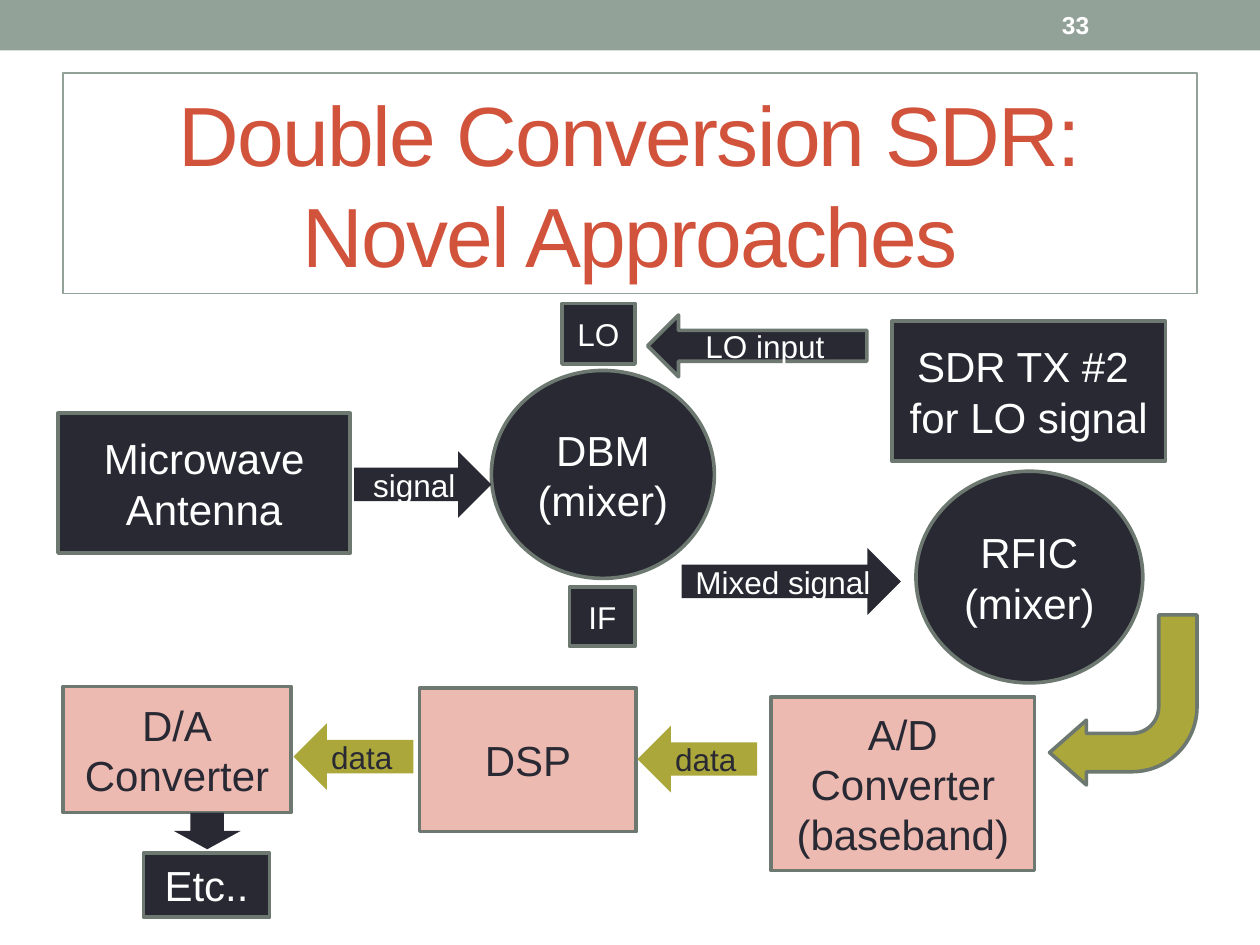
import pptx
import pptx.util
from collections import namedtuple
from dataclasses import dataclass
from pptx.dml.color import RGBColor
from pptx.enum.shapes import MSO_SHAPE
from pptx.enum.text import MSO_ANCHOR, MSO_AUTO_SIZE, PP_ALIGN

Box = namedtuple("Box", "column row columns rows")


@dataclass(frozen=True)
class Theme:
    font: str = "Arial"
    bar: str = "93A299"
    title: str = "D2533C"
    dark: str = "292934"
    light: str = "FFFFFF"
    pink: str = "EDBAB1"
    olive: str = "ACA73B"
    outline: str = "6D7871"
    title_size: int = 48
    block_size: int = 24
    label_size: int = 18
    number_size: int = 14
    outline_width: float = 2.08


THEME = Theme()
SLIDE_WIDTH = pptx.util.Inches(10)
SLIDE_HEIGHT = pptx.util.Inches(7.5)
COLUMN = SLIDE_WIDTH / 100
ROW = SLIDE_HEIGHT / 75


def color(value):
    return RGBColor.from_string(value)


def place(region, box):
    """Turn a box in grid cells, relative to its region, into slide lengths."""
    return (round((region.column + box.column) * COLUMN),
            round((region.row + box.row) * ROW),
            round(box.columns * COLUMN), round(box.rows * ROW))


def write(shape, text, size, text_color, align=PP_ALIGN.CENTER, bold=False):
    frame = shape.text_frame
    frame.word_wrap = True
    frame.auto_size = MSO_AUTO_SIZE.NONE
    frame.vertical_anchor = MSO_ANCHOR.MIDDLE
    frame.text = text
    for paragraph in frame.paragraphs:
        paragraph.alignment = align
        paragraph.font.name = THEME.font
        paragraph.font.size = pptx.util.Pt(size)
        paragraph.font.bold = bold
        paragraph.font.color.rgb = color(text_color)


def add_part(slide, region, kind, box, fill, text="", size=THEME.block_size, outlined=True):
    shape = slide.shapes.add_shape(kind, *place(region, box))
    shape.shadow.inherit = False
    shape.fill.solid()
    shape.fill.fore_color.rgb = color(fill)
    if outlined:
        shape.line.color.rgb = color(THEME.outline)
        shape.line.width = pptx.util.Pt(THEME.outline_width)
    else:
        shape.line.fill.background()
    if text:
        write(shape, text, size, THEME.light if fill == THEME.dark else THEME.dark)
    return shape


def add_arrow(slide, region, kind, box, fill, text="", outlined=False):
    arrow = add_part(slide, region, kind, box, fill, text, THEME.label_size, outlined)
    arrow.text_frame.margin_left = arrow.text_frame.margin_right = pptx.util.Inches(0.05)
    return arrow


def add_header(slide, region):
    add_part(slide, region, MSO_SHAPE.RECTANGLE, Box(0, 0, region.columns, region.rows),
             THEME.bar, outlined=False)
    number = slide.shapes.add_textbox(*place(region, Box(83.3, 0.2, 11.7, 3.6)))
    write(number, "33", THEME.number_size, THEME.light, PP_ALIGN.LEFT, bold=True)


def add_title(slide, region):
    title = slide.shapes.title
    title.left, title.top, title.width, title.height = place(
        region, Box(0, 0, region.columns, region.rows))
    title.line.color.rgb = color(THEME.bar)
    title.line.width = pptx.util.Pt(0.75)
    write(title, "Double Conversion SDR:\vNovel Approaches", THEME.title_size, THEME.title)
    # Tighter letter spacing, in hundredths of a point
    for run in title.text_frame.paragraphs[0].runs:
        run._r.get_or_add_rPr().set("spc", "-100")


def add_mixing_stage(slide, region):
    block, mixer = MSO_SHAPE.RECTANGLE, MSO_SHAPE.OVAL
    # Signal sources and mixers
    for kind, box, text in (
            (block, Box(4.6, 8.8, 23.2, 11.1), "Microwave Antenna"),
            (mixer, Box(39, 5.4, 17.7, 16.5), "DBM\n(mixer)"),
            (block, Box(70.8, 1.5, 21.7, 11.1), "SDR TX #2 \nfor LO signal"),
            (mixer, Box(72.7, 13.4, 18, 16.8), "RFIC\n(mixer)")):
        add_part(slide, region, kind, box, THEME.dark, text)
    # Mixer ports
    for box, text in ((Box(44.6, 0.1, 5.8, 4.8), "LO"),
                      (Box(45.2, 22.6, 5.2, 4.7), "IF")):
        add_part(slide, region, block, box, THEME.dark, text, THEME.label_size)
    # Signal flow
    for kind, box, text, outlined in (
            (MSO_SHAPE.RIGHT_ARROW, Box(28.1, 11.8, 10.9, 5.3), "signal", False),
            (MSO_SHAPE.RIGHT_ARROW, Box(54.1, 19.5, 17.4, 5.3), "Mixed signal", False),
            (MSO_SHAPE.LEFT_ARROW, Box(51.4, 1, 17.4, 4.9), "LO input", True)):
        add_arrow(slide, region, kind, box, THEME.dark, text, outlined)
    # Turn down into the digital stage
    bend = add_arrow(slide, region, MSO_SHAPE.BENT_ARROW, Box(83.3, 24.8, 11.7, 13.5),
                     THEME.olive, outlined=True)
    bend.rotation = 180
    for index, value in enumerate((0.26, 0.22, 0.25, 0.44)):
        bend.adjustments[index] = value


def add_digital_stage(slide, region):
    # Processing blocks
    for box, fill, text in (
            (Box(61.2, 1.3, 20.9, 13.8), THEME.pink, "A/D Converter\n(baseband)"),
            (Box(33.3, 0.6, 17.2, 11.4), THEME.pink, "DSP"),
            (Box(5, 0.5, 18.1, 10), THEME.pink, "D/A\nConverter"),
            (Box(11.4, 13.7, 10, 5.1), THEME.dark, "Etc..")):
        add_part(slide, region, MSO_SHAPE.RECTANGLE, box, fill, text)
    # Data flow
    for column, row in ((50.6, 3.6), (23.3, 3.4)):
        add_arrow(slide, region, MSO_SHAPE.LEFT_ARROW, Box(column, row, 9.5, 5.3),
                  THEME.olive, "data")
    add_arrow(slide, region, MSO_SHAPE.DOWN_ARROW, Box(13.8, 10.5, 5.3, 2.9), THEME.dark)


def main():
    presentation = pptx.Presentation()
    presentation.slide_width = SLIDE_WIDTH
    presentation.slide_height = SLIDE_HEIGHT
    slide = presentation.slides.add_slide(presentation.slide_layouts[5])
    add_header(slide, Box(0, 0, 100, 4))
    add_title(slide, Box(5, 5.8, 90, 17.5))
    add_mixing_stage(slide, Box(0, 24, 100, 30))
    add_digital_stage(slide, Box(0, 54, 100, 19))
    presentation.save("out.pptx")


if __name__ == "__main__":
    main()
